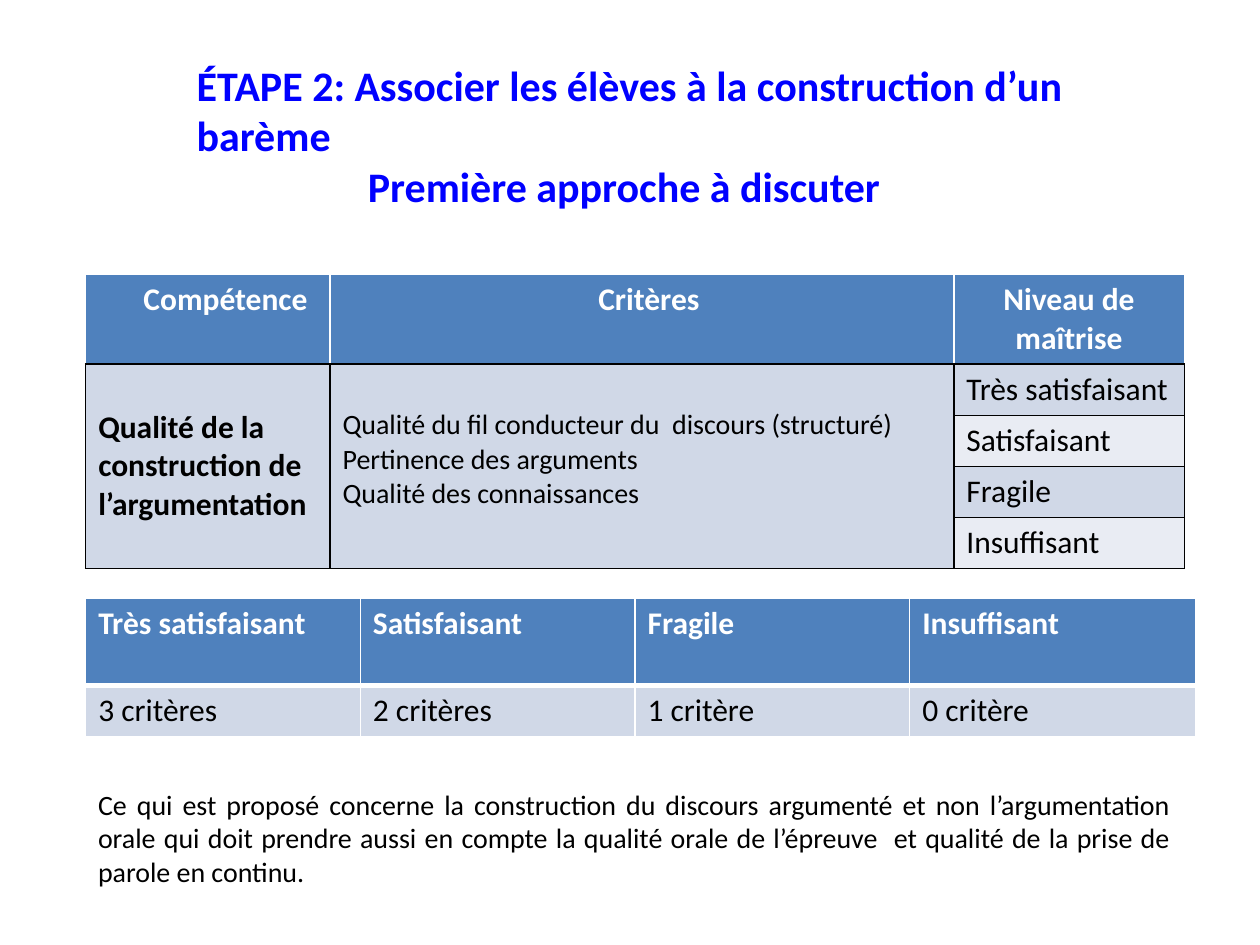
from lxml.etree import SubElement
from pptx import Presentation
from pptx.dml.color import RGBColor
from pptx.enum.text import MSO_ANCHOR, MSO_AUTO_SIZE, PP_ALIGN
from pptx.oxml.ns import qn
from pptx.util import Inches, Pt

WHITE, BLACK, TITLE_BLUE = "FFFFFF", "000000", "0000FF"
HEADER_BLUE, BAND_DARK, BAND_LIGHT = "4F81BD", "D0D8E7", "E9ECF3"
THIN, THICK = 0.96, 3
HEADER = {"size": Pt(18), "bold": True, "color": WHITE}
HEADING = {"size": Pt(18), "bold": True, "color": BLACK}
BODY = {"size": Pt(18), "bold": False, "color": BLACK}
SMALL = {"size": Pt(16), "bold": False, "color": BLACK}


def color(value):
    return RGBColor.from_string(value)


def write(frame, lines, look, align=PP_ALIGN.LEFT, indents=()):
    """Fill a text frame with one paragraph a line; indents are in inches."""
    for index, line in enumerate(lines):
        para = frame.paragraphs[0] if index == 0 else frame.add_paragraph()
        para.alignment = align
        if index < len(indents):
            properties = para._p.get_or_add_pPr()
            properties.set("marL", str(Inches(indents[index])))
            properties.set("indent", "0")
        span = para.add_run()
        span.text = line
        span.font.name = "Calibri"
        for name, value in look.items():
            if name == "color":
                span.font.color.rgb = color(value)
            else:
                setattr(span.font, name, value)


def set_borders(cell, **sides):
    """Draw the sides L, R, T and B, each a (colour, points) pair."""
    properties = cell._tc.get_or_add_tcPr()
    for index, side in enumerate("LRTB"):
        line_color, points = sides[side]
        line = SubElement(properties, qn(f"a:ln{side}"), w=str(Pt(points)))
        fill = SubElement(line, qn("a:solidFill"))
        SubElement(fill, qn("a:srgbClr"), val=line_color)
        properties.insert(index, line)


def style_cell(cell, fill, **sides):
    cell.fill.solid()
    cell.fill.fore_color.rgb = color(fill)
    set_borders(cell, **sides)


def new_table(page, box, widths, heights):
    left, top = box
    table = page.shapes.add_table(
        len(heights), len(widths), Inches(left), Inches(top),
        Inches(sum(widths)), Inches(sum(heights))).table
    for column, width in zip(table.columns, widths):
        column.width = Inches(width)
    for row, height in zip(table.rows, heights):
        row.height = Inches(height)
    return table


def place_title(page, box):
    title = page.shapes.title
    title.left, title.top, title.width, title.height = map(Inches, box)
    frame = title.text_frame
    settings = {"word_wrap": False, "auto_size": MSO_AUTO_SIZE.NONE,
                "vertical_anchor": MSO_ANCHOR.TOP}
    for name, value in settings.items():
        setattr(frame, name, value)
    write(frame, ["ÉTAPE 2: Associer les élèves à la construction d’un barème",
                  "Première approche à discuter"],
          {"size": Pt(24), "bold": True, "color": TITLE_BLUE},
          indents=(0, 1.36))


def place_criteria_table(page, box):
    levels = ["Très satisfaisant", "Satisfaisant", "Fragile", "Insuffisant"]
    table = new_table(page, box, [1.94, 4.95, 1.83], [0.7] + [0.4] * len(levels))

    # Header row
    white, black = (WHITE, THIN), (BLACK, THIN)
    headers = [("Compétence", 0.28), ("Critères", 0.11), ("Niveau de maîtrise", 0)]
    for column, (label, indent) in enumerate(headers):
        cell = table.cell(0, column)
        style_cell(cell, HEADER_BLUE, L=white, R=white, T=white, B=black)
        write(cell.text_frame, [label], HEADER, PP_ALIGN.CENTER, [indent])

    # Level rows, banded in the last column only
    for row, level in enumerate(levels, 1):
        for column in range(3):
            light = column == 2 and row % 2 == 0
            style_cell(table.cell(row, column), BAND_LIGHT if light else BAND_DARK,
                       L=black, R=black, T=black, B=black)
        write(table.cell(row, 2).text_frame, [level], BODY)

    # Skill and criteria, merged over all levels
    merged = [(["Qualité de la construction de l’argumentation"], HEADING),
              (["Qualité du fil conducteur du  discours (structuré)",
                "Pertinence des arguments", "Qualité des connaissances"], SMALL)]
    for column, (lines, look) in enumerate(merged):
        cell = table.cell(1, column)
        cell.merge(table.cell(len(levels), column))
        cell.margin_top = Inches(0.35)
        write(cell.text_frame, lines, look)


def place_scale_table(page, box):
    scale = [("Très satisfaisant", "3 critères"), ("Satisfaisant", "2 critères"),
             ("Fragile", "1 critère"), ("Insuffisant", "0 critère")]
    table = new_table(page, box, [2.18, 2.18, 2.18, 2.27], [0.69, 0.41])
    thin, thick = (WHITE, THIN), (WHITE, THICK)
    for column, (level, count) in enumerate(scale):
        head, body = table.cell(0, column), table.cell(1, column)
        style_cell(head, HEADER_BLUE, L=thin, R=thin, T=thin, B=thick)
        style_cell(body, BAND_DARK, L=thin, R=thin, T=thick, B=thin)
        write(head.text_frame, [level], HEADER)
        write(body.text_frame, [count], BODY)


def place_note(page, box):
    frame = page.shapes.add_textbox(*map(Inches, box)).text_frame
    frame.word_wrap = True
    write(frame, ["Ce qui est proposé concerne la construction du discours argumenté "
                  "et non l’argumentation orale qui doit prendre aussi en compte la "
                  "qualité orale de l’épreuve  et qualité de la prise de parole en "
                  "continu."], SMALL, PP_ALIGN.JUSTIFY)


def main():
    deck = Presentation()
    deck.slide_width, deck.slide_height = Inches(10), Inches(7.5)
    page = deck.slides.add_slide(deck.slide_layouts[5])
    place_title(page, (1.46, 0.42, 8.21, 0.9))
    place_criteria_table(page, (0.68, 2.18))
    place_note(page, (0.68, 6.2, 8.71, 0.9))
    place_scale_table(page, (0.68, 4.75))
    deck.save("out.pptx")


if __name__ == "__main__":
    main()
